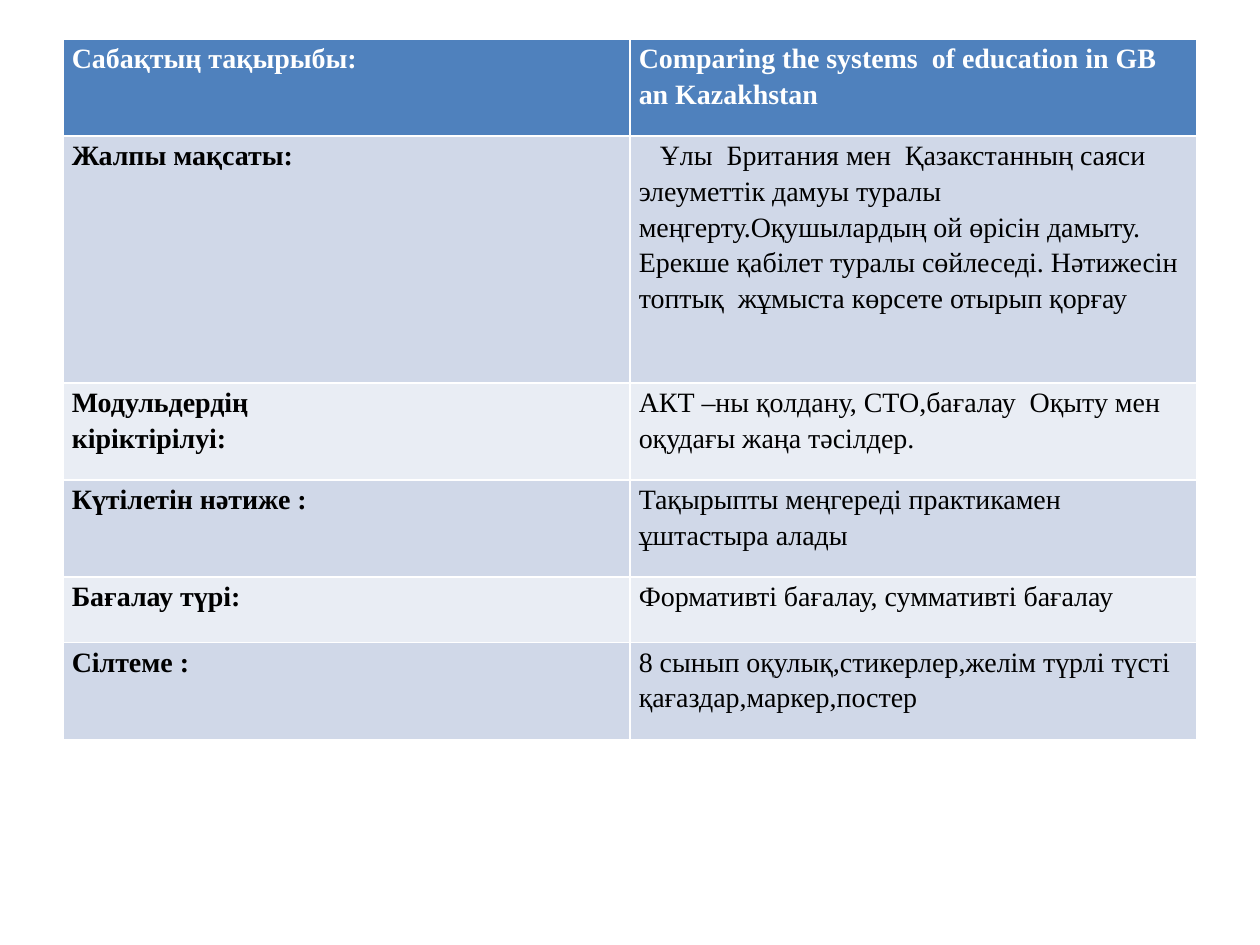
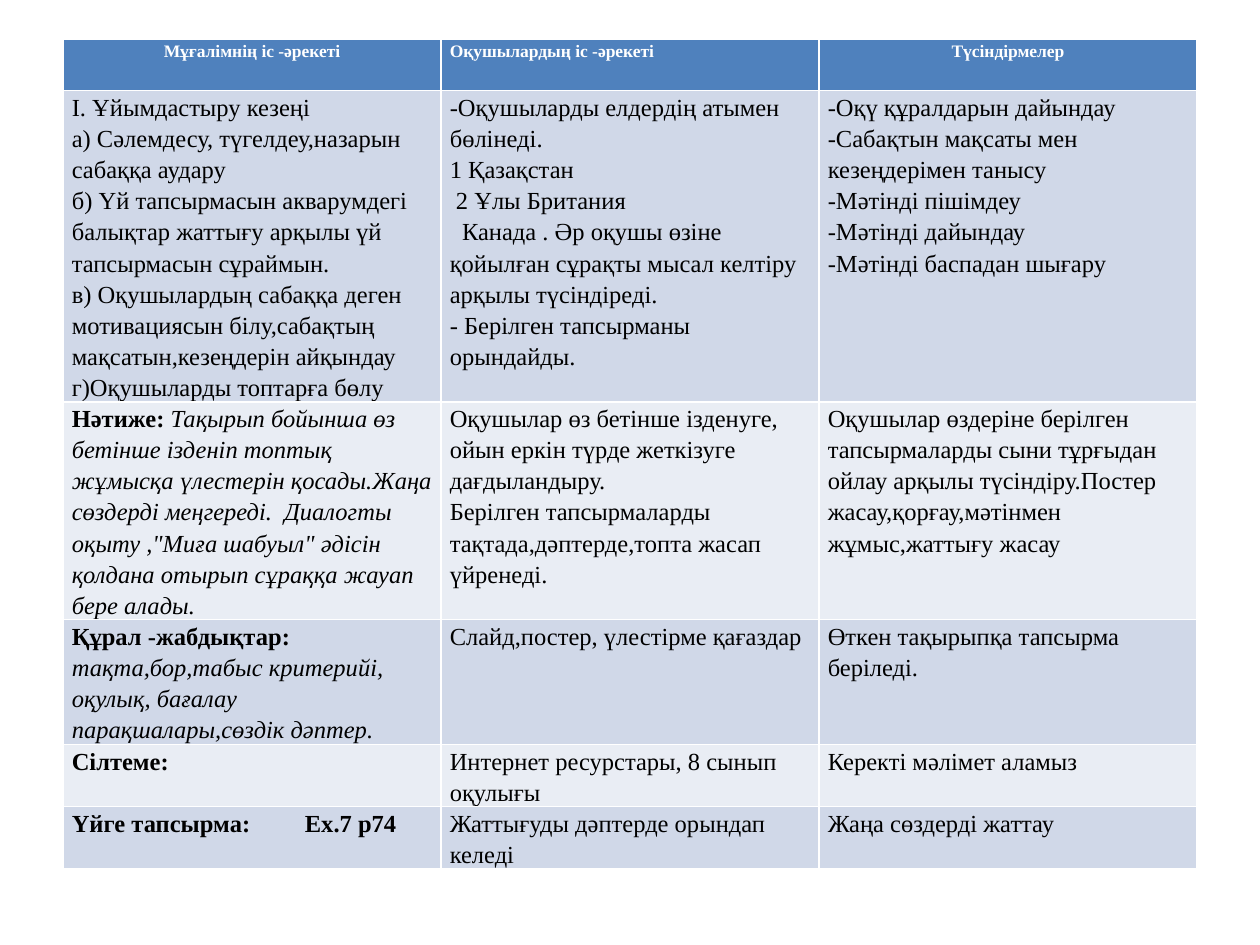
from dataclasses import dataclass

from lxml.etree import SubElement
from pptx import Presentation
from pptx.dml.color import RGBColor
from pptx.enum.text import PP_ALIGN as Align
from pptx.oxml.ns import qn
from pptx.util import Inches, Pt


@dataclass
class Line:
    """One paragraph: its text, an optional italic tail, and its layout."""
    text: str
    bold: bool = False
    tail: str = ""
    indent: float = 0
    tab: float = 0
    align: Align = Align.LEFT


def label(text, **layout):
    return Line(text, bold=True, **layout)


LESSON_PLAN = dict(
    header_size=16,
    body_size=16,
    row_heights=[0.77, 1.96, 0.77, 0.77, 0.52, 0.77],
    rows=[
        [label("Сабақтың тақырыбы:"),
         label("Comparing the systems  of education in GB an Kazakhstan")],
        [label("Жалпы мақсаты:"),
         Line("Ұлы  Британия мен  Қазакстанның саяси элеуметтік дамуы туралы "
              "меңгерту.Оқушылардың ой өрісін дамыту. Ерекше қабілет туралы "
              "сөйлеседі. Нәтижесін топтық  жұмыста көрсете отырып қорғау",
              indent=12)],
        [[label("Модульдердің"), label("кіріктірілуі:")],
         "АКТ –ны қолдану, СТО,бағалау  Оқыту мен оқудағы жаңа тәсілдер."],
        [label("Күтілетін нәтиже :"),
         "Тақырыпты меңгереді практикамен ұштастыра алады"],
        [label("Бағалау түрі:"), "Формативті бағалау, суммативті бағалау"],
        [label("Сілтеме :"),
         "8 сынып оқулық,стикерлер,желім түрлі түсті қағаздар,маркер,постер"],
    ],
)

LESSON_STEPS = dict(
    header_size=10,
    body_size=14,
    row_heights=[0.41, 2.46, 1.73, 0.99, 0.49, 0.49],
    rows=[
        [label("Мұғалімнің іс -әрекеті", align=Align.CENTER),
         label("Оқушылардың іс -әрекеті"),
         label("Түсіндірмелер", align=Align.CENTER)],
        [["І. Ұйымдастыру кезеңі",
          "а) Сәлемдесу, түгелдеу,назарын сабаққа аудару",
          "б) Үй тапсырмасын акварумдегі балықтар жаттығу арқылы үй "
          "тапсырмасын сұраймын.",
          "в) Оқушылардың сабаққа деген мотивациясын білу,сабақтың "
          "мақсатын,кезеңдерін айқындау",
          "г)Оқушыларды топтарға бөлу"],
         ["-Оқушыларды елдердің атымен бөлінеді.",
          "1 Қазақстан",
          Line("2 Ұлы Британия", indent=3.5),
          Line("Канада . Әр оқушы өзіне қойылған сұрақты мысал келтіру "
               "арқылы түсіндіреді.", indent=7),
          "- Берілген тапсырманы орындайды."],
         ["-Оқү құралдарын дайындау",
          "-Сабақтын мақсаты мен кезеңдерімен танысу",
          "-Мәтінді пішімдеу",
          "-Мәтінді дайындау",
          "-Мәтінді баспадан шығару"]],
        [label("Нәтиже:",
               tail=" Тақырып бойынша өз бетінше ізденіп топтық жұмысқа "
                    "үлестерін қосады.Жаңа сөздерді меңгереді.  Диалогты "
                    "оқыту ,\"Миға шабуыл\" әдісін қолдана отырып сұраққа "
                    "жауап бере алады."),
         ["Оқушылар өз бетінше ізденуге, ойын еркін түрде жеткізуге "
          "дағдыландыру.",
          "Берілген тапсырмаларды тақтада,дәптерде,топта жасап үйренеді."],
         "Оқушылар өздеріне берілген тапсырмаларды сыни тұрғыдан ойлау "
         "арқылы түсіндіру.Постер жасау,қорғау,мәтінмен жұмыс,жаттығу жасау"],
        [label("Құрал -жабдықтар:",
               tail=" тақта,бор,табыс критерийі, оқулық, бағалау "
                    "парақшалары,сөздік дәптер."),
         "Слайд,постер, үлестірме қағаздар",
         "Өткен тақырыпқа тапсырма беріледі."],
        [label("Сілтеме:"),
         "Интернет ресурстары, 8 сынып оқулығы",
         "Керекті мәлімет аламыз"],
        [label("Үйге тапсырма:\tЕх.7 р74", tab=1.85),
         "Жаттығуды дәптерде орындап келеді",
         "Жаңа сөздерді жаттау"],
    ],
)

FONT = "Times New Roman"
WHITE = RGBColor(0xFF, 0xFF, 0xFF)
BLACK = RGBColor(0x00, 0x00, 0x00)
HEADER_BLUE = RGBColor(0x4F, 0x81, 0xBD)
BANDS = [RGBColor(0xE9, 0xED, 0xF4), RGBColor(0xD0, 0xD8, 0xE8)]

SLIDE_WIDTH, SLIDE_HEIGHT = Inches(10), Inches(7.5)
TABLE_LEFT, TABLE_TOP = Inches(0.5), Inches(0.31)
TABLE_WIDTH = SLIDE_WIDTH - 2 * TABLE_LEFT
CELL_PADDING = Inches(0.07)
LINE_SPACING = 1.15


def write_line(paragraph, line, size, color):
    properties = paragraph._p.get_or_add_pPr()
    if line.indent:
        properties.set("indent", str(Pt(line.indent)))
    if line.tab:
        stops = SubElement(properties, qn("a:tabLst"))
        SubElement(stops, qn("a:tab"), pos=str(Inches(line.tab)), algn="l")
    paragraph.alignment = line.align
    paragraph.line_spacing = LINE_SPACING
    font = paragraph.font
    font.name, font.size, font.color.rgb = FONT, Pt(size), color

    lead = paragraph.add_run()
    lead.text = line.text
    if line.tail:
        lead.font.bold = line.bold
        tail = paragraph.add_run()
        tail.text = line.tail
        tail.font.bold, tail.font.italic = False, True
    else:
        font.bold = line.bold


def fill_cell(cell, content, fill, size, color):
    cell.fill.solid()
    cell.fill.fore_color.rgb = fill
    cell.margin_left = cell.margin_right = CELL_PADDING
    cell.margin_top = cell.margin_bottom = 0
    lines = content if isinstance(content, list) else [content]
    frame = cell.text_frame
    for index, line in enumerate(lines):
        paragraph = frame.add_paragraph() if index else frame.paragraphs[0]
        write_line(paragraph, Line(line) if isinstance(line, str) else line,
                   size, color)


def add_lesson_slide(deck, lesson):
    slide = deck.slides.add_slide(deck.slide_layouts[6])
    rows, heights = lesson["rows"], lesson["row_heights"]
    table = slide.shapes.add_table(
        len(rows), len(rows[0]), TABLE_LEFT, TABLE_TOP,
        TABLE_WIDTH, Inches(sum(heights))).table
    for r, (row, height) in enumerate(zip(rows, heights)):
        table.rows[r].height = Inches(height)
        if r == 0:
            look = HEADER_BLUE, lesson["header_size"], WHITE
        else:
            look = BANDS[r % 2], lesson["body_size"], BLACK
        for c, content in enumerate(row):
            fill_cell(table.cell(r, c), content, *look)


def main():
    deck = Presentation()
    deck.slide_width, deck.slide_height = SLIDE_WIDTH, SLIDE_HEIGHT
    for lesson in (LESSON_PLAN, LESSON_STEPS):
        add_lesson_slide(deck, lesson)
    deck.save("out.pptx")


if __name__ == "__main__":
    main()
